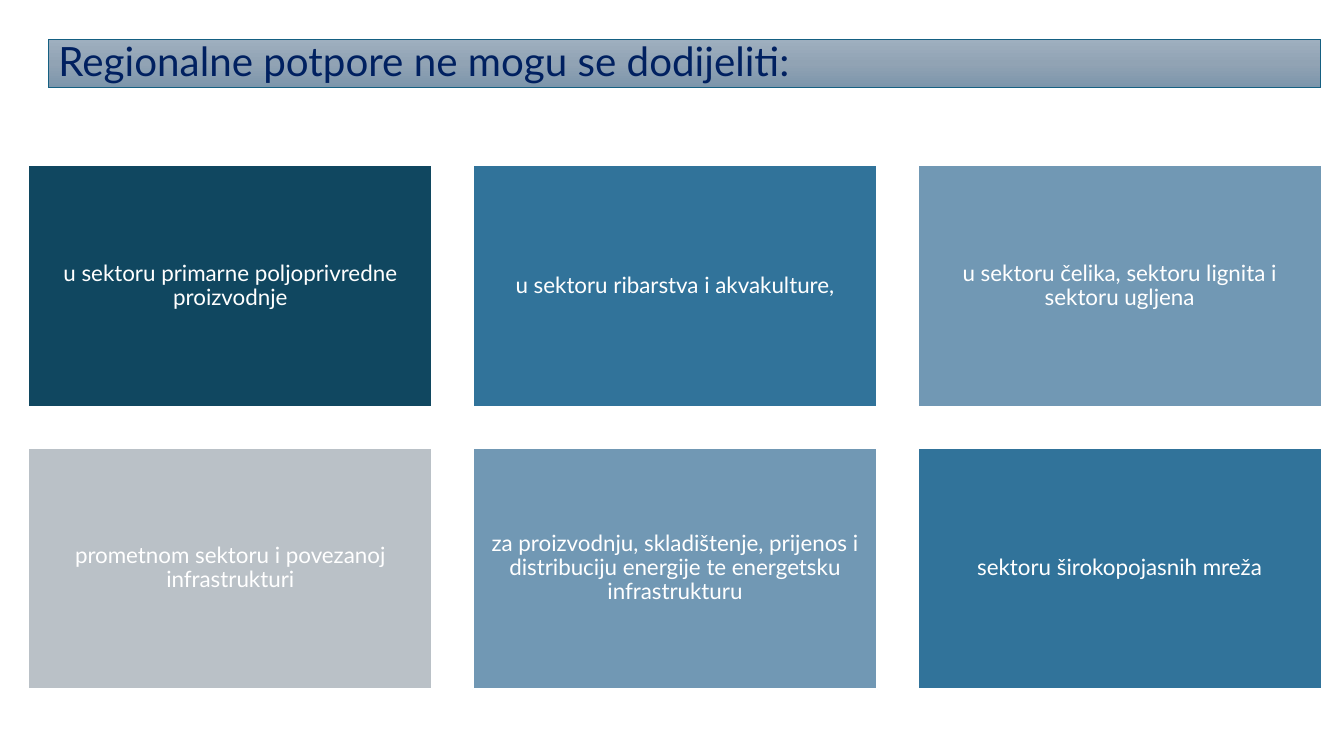
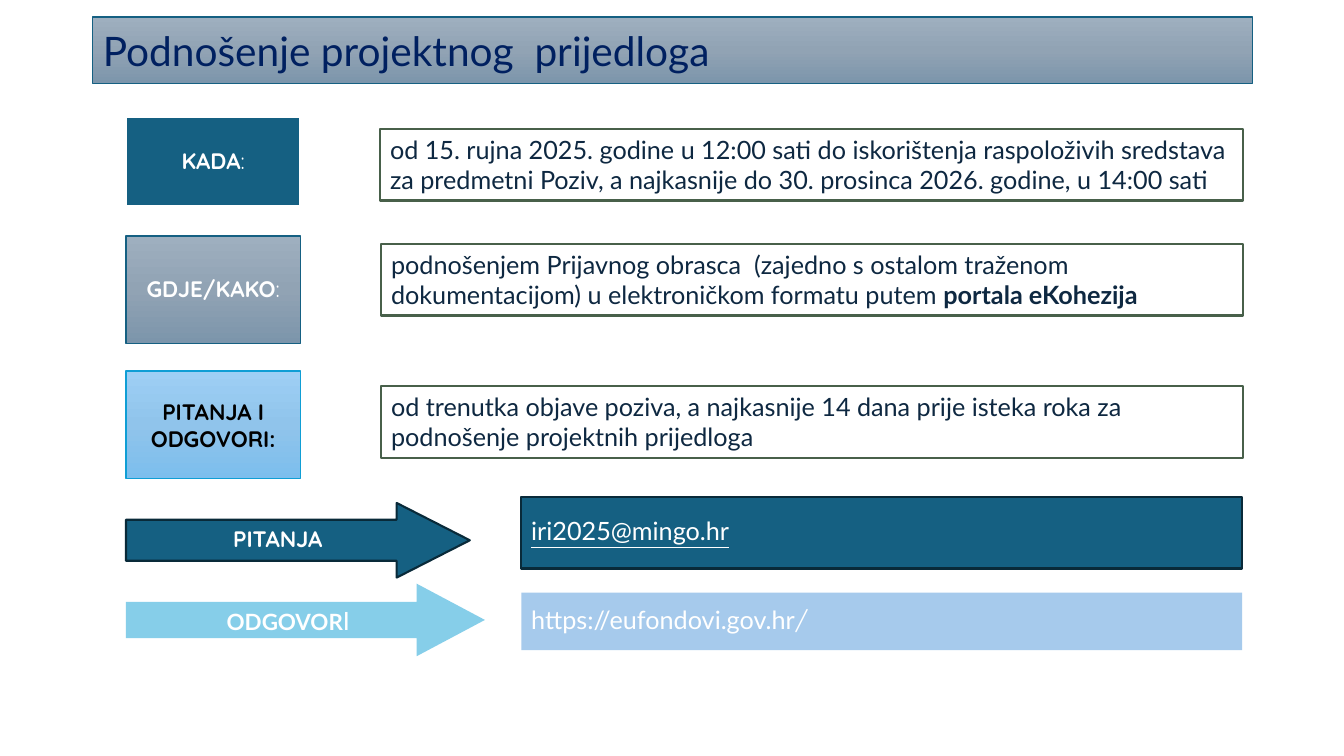
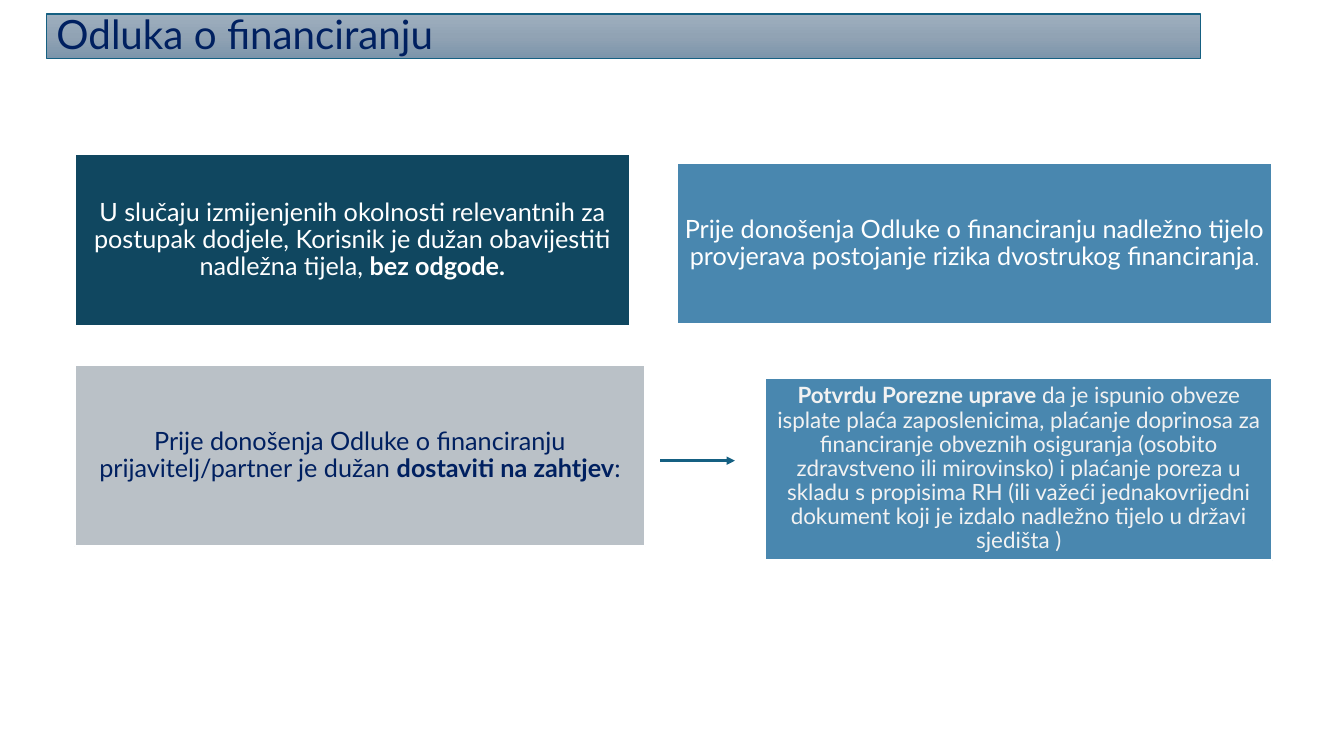
from copy import deepcopy
from itertools import product

from lxml.etree import SubElement
from pptx import Presentation
from pptx.dml.color import RGBColor
from pptx.enum.shapes import MSO_CONNECTOR as Connector
from pptx.enum.shapes import MSO_SHAPE as Shape
from pptx.enum.text import MSO_ANCHOR as Anchor
from pptx.enum.text import MSO_AUTO_SIZE as AutoSize
from pptx.enum.text import PP_ALIGN as Align
from pptx.oxml.ns import qn
from pptx.util import Inches, Pt

WHITE, NAVY, TEAL, INK = "FFFFFF", "002060", "156082", "0E2841"
DEEP, BLUE, STEEL, SILVER, SKY = "104760", "31739A", "7198B4", "BAC1C7", "4987AF"
DARK_EDGE, GREEN_EDGE, BRIGHT, PALE = "092A39", "48604A", "0F9ED5", "A6CAEC"
SLATE_GRADIENT = ("9EAFBF", "91A3B4", "7C95AB")
SKY_GRADIENT = ("9ECFF5", "90C4EB", "7CBEED")
BODY_FONT, LABEL_FONT = "Lato", "Quicksand"


def rgb(value):
    return RGBColor.from_string(value)


class SlideBuilder:
    def __init__(self):
        self.deck = Presentation()
        self.deck.slide_width, self.deck.slide_height = Inches(13.33), Inches(7.5)
        self.page = None

    def new_page(self, title, at, spacing=0.9, size=28.8):
        layout = self.deck.slide_layouts.get_by_name("Title Only")
        self.page = self.deck.slides.add_slide(layout)
        band = self.page.shapes.title
        band.left, band.top, band.width, band.height = map(Inches, at)
        self.paint(band, SLATE_GRADIENT, (TEAL, 1))
        self.set_text(band, title, size=size, color=NAVY, align=Align.LEFT, spacing=spacing)

    def paint(self, shape, fill, line=None, alpha=None):
        """Fill with one colour or evenly spaced gradient stops; line is (colour, points)."""
        if isinstance(fill, str):
            shape.fill.solid()
            shape.fill.fore_color.rgb = rgb(fill)
            if alpha is not None:
                color = shape.element.spPr.find(".//" + qn("a:srgbClr"))
                SubElement(color, qn("a:alpha"), val=str(alpha * 1000))
        else:
            shape.fill.gradient()
            shape.fill.gradient_angle = 270
            stop_list = shape.element.spPr.find(".//" + qn("a:gsLst"))
            while len(stop_list) < len(fill):
                stop_list.insert(1, deepcopy(stop_list[0]))
            for index, (stop, color) in enumerate(zip(shape.fill.gradient_stops, fill)):
                stop.color.rgb = rgb(color)
                stop.position = index / (len(fill) - 1)
        if line:
            shape.line.color.rgb, shape.line.width = rgb(line[0]), Pt(line[1])
        else:
            shape.line.fill.background()

    def set_text(self, shape, text, size=18, color=WHITE, font=BODY_FONT, align=Align.CENTER,
                 spacing=0.9, anchor=Anchor.MIDDLE, inset=None):
        """Set the text to a string, or a list of (text, format changes) spans."""
        frame = shape.text_frame
        frame.word_wrap, frame.auto_size = True, AutoSize.NONE
        frame.vertical_anchor = anchor
        if inset is not None:
            for side in ("left", "top", "right", "bottom"):
                setattr(frame, "margin_" + side, Inches(inset))
        para = frame.paragraphs[0]
        para.alignment, para.line_spacing = align, spacing
        for content, changes in [(text, {})] if isinstance(text, str) else text:
            span = para.add_run()
            span.text = content
            style = {"name": font, "size": size, "bold": False, **changes}
            style["size"] = Pt(style["size"])
            for name, value in style.items():
                setattr(span.font, name, value)
            span.font.color.rgb = rgb(color)

    def box(self, at, text, fill, line=None, kind=Shape.RECTANGLE, adjust=(), alpha=None,
            **text_style):
        box = self.page.shapes.add_shape(kind, *map(Inches, at))
        box.shadow.inherit = False
        for index, value in enumerate(adjust):
            box.adjustments[index] = value
        self.paint(box, fill, line, alpha)
        self.set_text(box, text, **text_style)

    def card(self, at, text, fill, **text_style):
        self.box(at, text, fill, (WHITE, 1.5), inset=0.07, **text_style)

    def label(self, at, text, fill, line=None, **style):
        self.box(at, text, fill, line, **{"size": 16, "font": LABEL_FONT, **style})

    def answer(self, at, text):
        self.box(at, text, WHITE, (GREEN_EDGE, 1.5), color=INK, align=Align.LEFT,
                 spacing=1.0, anchor=Anchor.TOP)

    def arrow(self, start, end):
        line = self.page.shapes.add_connector(Connector.STRAIGHT, *map(Inches, start + end))
        line.line.color.rgb, line.line.width = rgb(TEAL), Pt(2)
        properties = line.element.spPr
        SubElement(properties.find(qn("a:ln")), qn("a:tailEnd"), type="triangle")
        SubElement(properties, qn("a:effectLst"))


def excluded_sectors(builder):
    builder.new_page("Regionalne potpore ne mogu se dodijeliti:", (0.48, 0.39, 12.62, 0.48))
    sectors = [
        ("u sektoru primarne poljoprivredne proizvodnje", DEEP),
        ("u sektoru ribarstva i akvakulture,", BLUE),
        ("u sektoru čelika, sektoru lignita i sektoru ugljena", STEEL),
        ("prometnom sektoru i povezanoj infrastrukturi", SILVER),
        ("za proizvodnju, skladištenje, prijenos i distribuciju energije te energetsku "
         "infrastrukturu", STEEL),
        ("sektoru širokopojasnih mreža", BLUE),
    ]
    width, height, gap = 4.01, 2.4, 0.4
    for (row, column), (text, fill) in zip(product(range(2), range(3)), sectors):
        at = (0.28 + column * (width + gap), 1.64 + row * (height + gap), width, height)
        builder.card(at, text, fill, size=16)


def submission(builder):
    builder.new_page("Podnošenje projektnog  prijedloga", (0.92, 0.17, 11.5, 0.66),
                     spacing=1.0, size=29)
    left, width, bold = 1.25, 1.73, {"bold": True}
    builder.label((left, 1.16, width, 0.89), [("KADA", bold), (":", {})], TEAL, (WHITE, 2))
    builder.label((left, 2.34, width, 1.07), [("GDJE/KAKO", bold), (":", {})],
                  SLATE_GRADIENT, (TEAL, 1))
    builder.label((left, 3.68, width, 1.07), [("PITANJA I ODGOVORI:", bold)],
                  SKY_GRADIENT, (BRIGHT, 1), color="000000", spacing=1.0)
    builder.label((left, 4.99, 3.41, 0.74), [("PITANJA", bold)], TEAL, (DARK_EDGE, 1.5),
                  kind=Shape.RIGHT_ARROW, adjust=(0.55, 0.98))
    builder.label((left, 5.79, 3.56, 0.72), [("ODGOVOR", bold), ("I", {"size": 18})], BRIGHT,
                  kind=Shape.RIGHT_ARROW, adjust=(0.5, 0.94), alpha=50, font=BODY_FONT,
                  spacing=1.0)

    builder.answer((3.77, 1.28, 8.56, 0.71),
                   "od 15. rujna 2025. godine u 12:00 sati do iskorištenja raspoloživih sredstava "
                   "za predmetni Poziv, a najkasnije do 30. prosinca 2026. godine, u 14:00 sati")
    builder.answer((3.78, 2.42, 8.55, 0.71),
                   [("podnošenjem Prijavnog obrasca  (zajedno s ostalom traženom "
                     "dokumentacijom) u elektroničkom formatu putem ", {}),
                    ("portala eKohezija", bold)])
    builder.answer((3.78, 3.83, 8.55, 0.71),
                   "od trenutka objave poziva, a najkasnije 14 dana prije isteka roka za "
                   "podnošenje projektnih prijedloga")
    builder.box((5.17, 4.93, 7.15, 0.71), [("iri2025@mingo.hr", {"underline": True})],
                TEAL, (DARK_EDGE, 1.5), align=Align.LEFT)
    builder.box((5.17, 5.88, 7.15, 0.57),
                [("https://eufondovi.gov.hr", {}), ("/", {"name": LABEL_FONT})],
                PALE, align=Align.LEFT)


def funding_decision(builder):
    builder.new_page("Odluka o financiranju", (0.46, 0.14, 11.45, 0.44))
    bold = {"bold": True}
    builder.card((0.74, 1.53, 5.51, 1.71),
                 [("U slučaju izmijenjenih okolnosti relevantnih za postupak dodjele, Korisnik je "
                   "dužan obavijestiti nadležna tijela, ", {}), ("bez odgode.", bold)], DEEP)
    builder.card((6.71, 1.62, 5.91, 1.6),
                 [("Prije donošenja Odluke o financiranju nadležno tijelo provjerava postojanje "
                   "rizika dvostrukog financiranja", {}), (".", {"size": 13})], SKY)
    builder.card((0.74, 3.62, 5.66, 1.8),
                 [("Prije donošenja Odluke o financiranju prijavitelj/partner je dužan ", {}),
                  ("dostaviti na zahtjev", bold), (":", {})], SILVER, color=NAVY)
    builder.card((7.59, 3.75, 5.03, 1.81),
                 [("Potvrdu Porezne uprave ", bold),
                  ("da je ispunio obveze isplate plaća zaposlenicima, plaćanje doprinosa za "
                   "financiranje obveznih osiguranja (osobito zdravstveno ili mirovinsko) i "
                   "plaćanje poreza u skladu s propisima RH (ili važeći jednakovrijedni dokument "
                   "koji je izdalo nadležno tijelo u državi sjedišta )", {})],
                 SKY, size=16, color="F2F2F2")
    builder.arrow((6.55, 4.57), (7.29, 4.57))


def main():
    builder = SlideBuilder()
    for build in (excluded_sectors, submission, funding_decision):
        build(builder)
    builder.deck.save("out.pptx")


if __name__ == "__main__":
    main()
